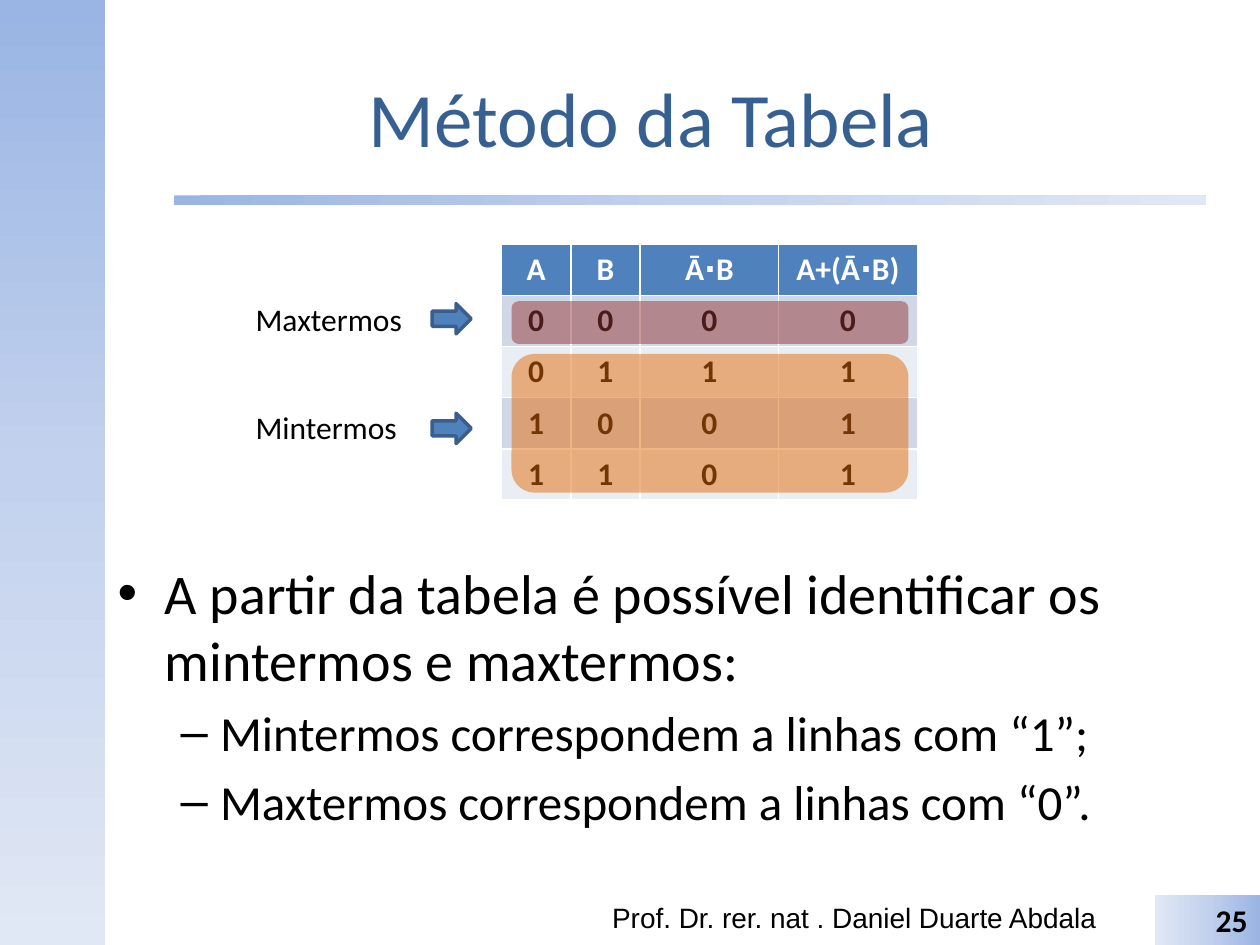
"""Build a slide on reading minterms and maxterms from a truth table."""
from copy import deepcopy

from pptx import Presentation
from pptx.dml.color import RGBColor
from pptx.enum.shapes import MSO_SHAPE
from pptx.enum.text import MSO_ANCHOR, MSO_AUTO_SIZE, PP_ALIGN
from pptx.oxml.ns import qn
from pptx.util import Inches, Pt

BLACK = RGBColor(0x00, 0x00, 0x00)
WHITE = RGBColor(0xFF, 0xFF, 0xFF)
TITLE_BLUE = RGBColor(0x37, 0x60, 0x92)
BLUE = RGBColor(0x4F, 0x81, 0xBD)
DARK_BLUE = RGBColor(0x3A, 0x5F, 0x8C)
ROW_FILLS = [RGBColor(0xE9, 0xED, 0xF4), RGBColor(0xD0, 0xD8, 0xE8)]
ORANGE = RGBColor(0xE4, 0x6C, 0x0A)
RED = RGBColor(0x95, 0x37, 0x35)
GRADIENT = [RGBColor(0x9A, 0xB5, 0xE4), RGBColor(0xC2, 0xD1, 0xED), RGBColor(0xE1, 0xE8, 0xF5)]

WIDTH, HEIGHT = 10, 7.5
BAND = WIDTH / 12
CONTENT_WIDTH = 8.67
FOOTER_HEIGHT = 0.4
FOOTER_TOP = HEIGHT - FOOTER_HEIGHT
TABLE_LEFT, TABLE_TOP = 3.98, 1.94
COLUMN, ROW = 0.55, 0.405
COLUMN_SPANS = [1, 1, 2, 2]
TRUTH_TABLE = [
    ["A", "B", "Ā⋅B", "A+(Ā⋅B)"],
    ["0", "0", "0", "0"],
    ["0", "1", "1", "1"],
    ["1", "0", "0", "1"],
    ["1", "1", "0", "1"],
]


def add_plain_shape(kind, left, top, width, height):
    shape = slide.shapes.add_shape(kind, Inches(left), Inches(top), Inches(width), Inches(height))
    shape.shadow.inherit = False
    shape.line.fill.background()
    return shape


def format_font(font, size, color, bold=False, name="Calibri"):
    font.name, font.size, font.bold = name, Pt(size), bold
    font.color.rgb = color


presentation = Presentation()
presentation.slide_width, presentation.slide_height = Inches(WIDTH), Inches(HEIGHT)
slide = presentation.slides.add_slide(presentation.slide_layouts[1])

gradient_shapes = []
for kind, left, top, width, height, angle in [
    (MSO_SHAPE.RECTANGLE, 0, 0, BAND, HEIGHT, 270),
    (MSO_SHAPE.ROUNDED_RECTANGLE, 1.38, 1.55, 8.19, 0.08, 0),
    (MSO_SHAPE.RECTANGLE, WIDTH - BAND, FOOTER_TOP, BAND, FOOTER_HEIGHT, 180),
]:
    shape = add_plain_shape(kind, left, top, width, height)
    shape.fill.gradient()
    shape.fill.gradient_angle = angle
    stop_list = next(shape._element.iter(qn("a:gsLst")))
    stop_list.insert(1, deepcopy(stop_list[0]))
    for index, (stop, color) in enumerate(zip(shape.fill.gradient_stops, GRADIENT)):
        stop.color.rgb = color
        stop.position = index / 2
    gradient_shapes.append(shape)

title = slide.shapes.title
title.left, title.top = Inches(BAND), Inches(0.3)
title.width, title.height = Inches(CONTENT_WIDTH), Inches(1.25)
title.text_frame.text = "Método da Tabela"
title.text_frame.vertical_anchor = MSO_ANCHOR.MIDDLE
title.text_frame.paragraphs[0].alignment = PP_ALIGN.CENTER
format_font(title.text_frame.paragraphs[0].font, 44, TITLE_BLUE)

body = slide.placeholders[1]
body.left, body.top = Inches(BAND), Inches(4.38)
body.width, body.height = Inches(CONTENT_WIDTH), Inches(2.32)
body.text_frame.text = "\n".join([
    "A partir da tabela é possível identificar os mintermos e maxtermos:",
    "Mintermos correspondem a linhas com “1”;",
    "Maxtermos correspondem a linhas com “0”.",
])
body.text_frame.auto_size = MSO_AUTO_SIZE.NONE
for paragraph, level in zip(body.text_frame.paragraphs, [0, 1, 1]):
    paragraph.level = level
    format_font(paragraph.font, 32 - 4 * level, BLACK)

number_frame = gradient_shapes[-1].text_frame
number_frame.text = "25"
number_frame.vertical_anchor = MSO_ANCHOR.MIDDLE
number_frame.paragraphs[0].alignment = PP_ALIGN.RIGHT
format_font(number_frame.paragraphs[0].font, 18, BLACK, True)

table = slide.shapes.add_table(
    len(TRUTH_TABLE), len(COLUMN_SPANS), Inches(TABLE_LEFT), Inches(TABLE_TOP),
    Inches(COLUMN * sum(COLUMN_SPANS)), Inches(ROW * len(TRUTH_TABLE)),
).table
for column, span in zip(table.columns, COLUMN_SPANS):
    column.width = Inches(COLUMN * span)
for row_index, values in enumerate(TRUTH_TABLE):
    table.rows[row_index].height = Inches(ROW)
    header = row_index == 0
    for column_index, value in enumerate(values):
        cell = table.cell(row_index, column_index)
        cell.text = value
        cell.fill.solid()
        cell.fill.fore_color.rgb = BLUE if header else ROW_FILLS[row_index % 2]
        paragraph = cell.text_frame.paragraphs[0]
        paragraph.alignment = PP_ALIGN.CENTER
        format_font(paragraph.font, 18, WHITE if header else BLACK, True)

for top, height, color in [(2.81, 1.1, ORANGE), (2.39, 0.34, RED)]:
    highlight = add_plain_shape(MSO_SHAPE.ROUNDED_RECTANGLE, 4.06, top, 3.15, height)
    highlight.fill.solid()
    highlight.fill.fore_color.rgb = color
    color_element = next(highlight._element.spPr.iter(qn("a:srgbClr")))
    color_element.makeelement(qn("a:alpha"))
    alpha = deepcopy(color_element.makeelement(qn("a:alpha"), {"val": "50000"}))
    color_element.append(alpha)

for top in [2.41, 3.28]:
    arrow = add_plain_shape(MSO_SHAPE.RIGHT_ARROW, 3.43, top, 0.31, 0.24)
    arrow.fill.solid()
    arrow.fill.fore_color.rgb = BLUE
    arrow.line.color.rgb = DARK_BLUE
    arrow.line.width = Pt(2)

for text, left, top, width, size, name, wrap in [
    ("Maxtermos", 1.93, 2.33, 1.37, 18, "Calibri", False),
    ("Mintermos", 1.93, 3.19, 1.33, 18, "Calibri", False),
    ("Prof. Dr. rer. nat . Daniel Duarte Abdala", 4.76, FOOTER_TOP, 4.19, 16, "Arial", True),
]:
    label = slide.shapes.add_textbox(Inches(left), Inches(top), Inches(width), Inches(0.4))
    label.text_frame.text = text
    label.text_frame.word_wrap = wrap
    format_font(label.text_frame.paragraphs[0].font, size, BLACK, name=name)

presentation.save("out.pptx")
